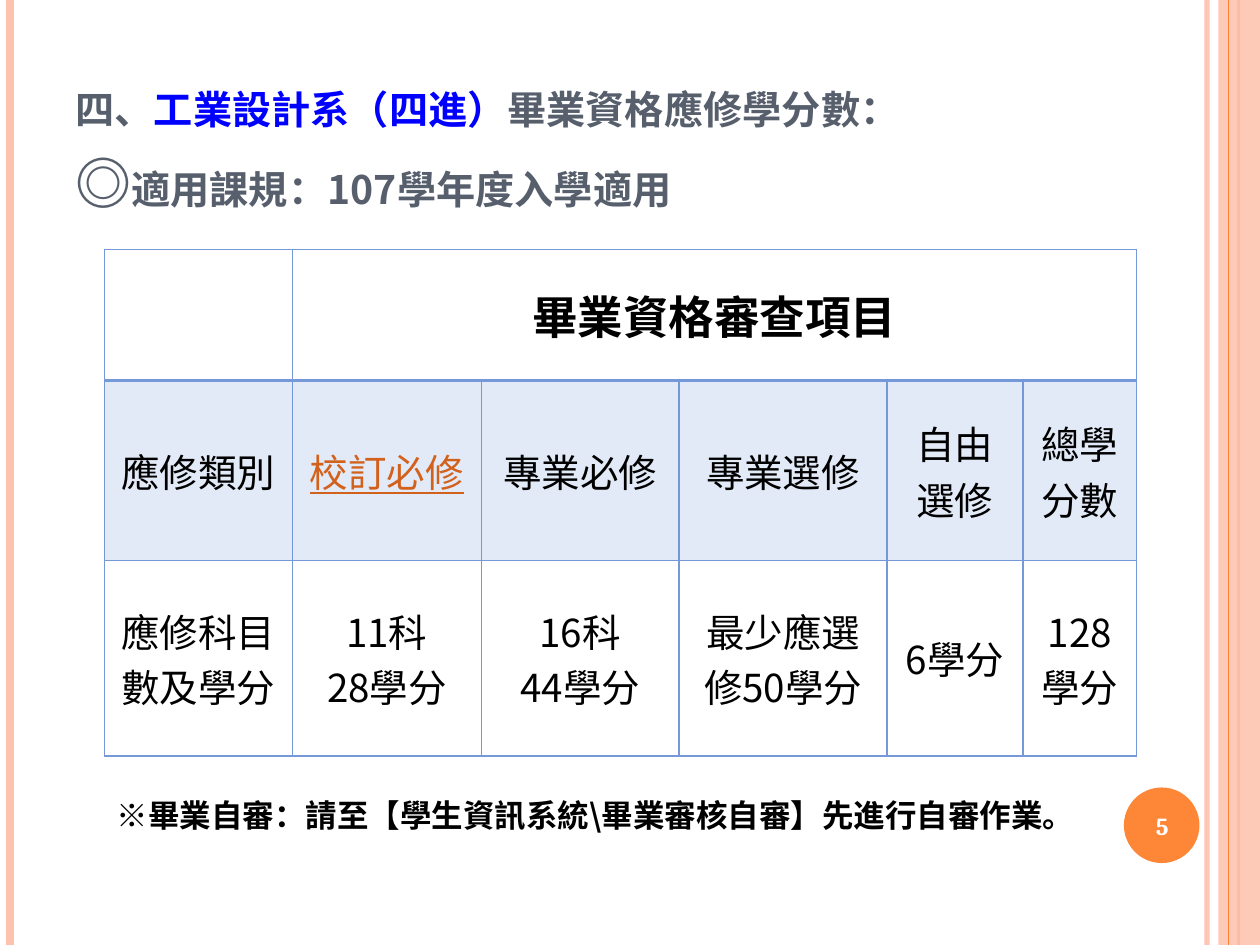
from lxml import etree
from pptx import Presentation
from pptx.dml.color import RGBColor
from pptx.enum.shapes import MSO_CONNECTOR, MSO_SHAPE
from pptx.enum.text import MSO_ANCHOR, PP_ALIGN
from pptx.oxml.ns import qn
from pptx.util import Inches, Pt

CENTER = PP_ALIGN.CENTER
MIDDLE, BOTTOM = MSO_ANCHOR.MIDDLE, MSO_ANCHOR.BOTTOM
STRAIGHT = MSO_CONNECTOR.STRAIGHT
RECT, OVAL = MSO_SHAPE.RECTANGLE, MSO_SHAPE.OVAL

CJK, SYMBOL, SERIF = "Noto Sans CJK SC", "Noto Sans CJK JP", "Cambria"
PEACH, ORANGE, BLUE, SLATE = "FEC3AE", "FE8637", "7598D9", "575F6D"
BLACK, WHITE, LINK, TITLE_BLUE = "000000", "FFFFFF", "D2611C", "0000FF"

# x, colour, width in points, opacity in percent
SIDE_LINES = [(9.58, PEACH, 3, 93), (0.08, PEACH, 4.5, 100), (9.83, ORANGE, 1.5, 100)]
EDGE_LINE = (9.75, ORANGE, 0.75, 100)

COLUMNS = [1.49, 1.5, 1.57, 1.65, 1.08, 0.9]
ROWS = [1.04, 1.43, 1.55]
HEADING = "畢業資格審查項目"
CATEGORIES = ["應修類別", "校訂必修", "專業必修", "專業選修", "自由\n選修", "總學\n分數"]
CREDITS = ["應修科目數及學分", "11科\n28學分", "16科\n44學分", "最少應選修50學分",
           "6學分", "128\n學分"]


def rgb(color):
    return RGBColor.from_string(color)


def set_fill(fill, color, opacity=100):
    fill.solid()
    fill.fore_color.rgb = rgb(color)
    if opacity < 100:
        clr = fill._xPr.find(qn("a:solidFill"))[0]
        etree.SubElement(clr, qn("a:alpha"), val=str(opacity * 1000))


def set_font(font, size, color, name=CJK, bold=False):
    """Set the font for both Latin and East Asian characters."""
    font.size, font.bold, font.name = Pt(size), bold, name
    font.color.rgb = rgb(color)
    latin = font._element.find(qn("a:latin"))
    ea = etree.Element(qn("a:ea"), typeface=name)
    latin.addnext(ea)


def add_line(s, x, color, width, opacity):
    """Add a vertical line over the full slide height."""
    line = s.shapes.add_connector(STRAIGHT, Inches(x), 0, Inches(x), Inches(7.5))
    line.line.width = Pt(width)
    set_fill(line.line.fill, color, opacity)
    etree.SubElement(line._element.spPr, qn("a:effectLst"))


def add_shape(s, kind, box, color, opacity=100):
    sp = s.shapes.add_shape(kind, *map(Inches, box))
    sp.shadow.inherit = False
    sp.line.fill.background()
    set_fill(sp.fill, color, opacity)


def add_text_frame(s, box, anchor=None):
    tf = s.shapes.add_textbox(*map(Inches, box)).text_frame
    tf.word_wrap = True
    tf.vertical_anchor = anchor
    return tf


def add_label(s, box, text, size, color, name=CJK, anchor=None, align=None):
    p = add_text_frame(s, box, anchor).paragraphs[0]
    p.alignment = align
    r = p.add_run()
    r.text = text
    set_font(r.font, size, color, name, True)


def add_title(s):
    p = add_text_frame(s, (0.5, 0.53, 8.17, 1.25), BOTTOM).paragraphs[0]
    lines = [
        [("四、", SLATE, 28, CJK), ("工業設計系（四進）", TITLE_BLUE, 28, CJK),
         ("畢業資格應修學分數：", SLATE, 28, CJK)],
        [("◎", SLATE, 40, SYMBOL), ("適用課規：107學年度入學適用", SLATE, 28, CJK)],
    ]
    for i, line in enumerate(lines):
        if i:
            p.add_line_break()
        for text, color, size, name in line:
            r = p.add_run()
            r.text = text
            set_font(r.font, size, color, name, True)
            r.font._element.set("cap", "small")


def set_borders(cell, top, bottom):
    tc_pr = cell._tc.get_or_add_tcPr()
    for side, width in (("L", 1), ("R", 1), ("T", top), ("B", bottom)):
        ln = etree.SubElement(tc_pr, qn(f"a:ln{side}"), w=str(Pt(width)))
        fill = etree.SubElement(ln, qn("a:solidFill"))
        etree.SubElement(fill, qn("a:srgbClr"), val=BLUE)


def fill_cell(cell, text, size=22, color=BLACK, bold=False):
    cell.vertical_anchor = MIDDLE
    cell.text_frame.text = text
    for p in cell.text_frame.paragraphs:
        p.alignment = CENTER
        for r in p.runs:
            set_font(r.font, size, color, CJK, bold)
            if color == LINK:
                r.font.underline = True


def add_credit_table(s):
    box = (0.83, 1.98, sum(COLUMNS), sum(ROWS))
    table = s.shapes.add_table(len(ROWS), len(COLUMNS), *map(Inches, box)).table
    for column, width in zip(table.columns, COLUMNS):
        column.width = Inches(width)
    for i, height in enumerate(ROWS):
        table.rows[i].height = Inches(height)
        for cell in table.rows[i].cells:
            set_borders(cell, 2 if i == 1 else 1, 2 if i == 0 else 1)
            if i == 1:
                set_fill(cell.fill, BLUE, 20)
            else:
                cell.fill.background()

    table.cell(0, 1).merge(table.cell(0, len(COLUMNS) - 1))
    fill_cell(table.cell(0, 1), HEADING, 26, bold=True)
    for j, (category, credit) in enumerate(zip(CATEGORIES, CREDITS)):
        fill_cell(table.cell(1, j), category, color=LINK if j == 1 else BLACK)
        fill_cell(table.cell(2, j), credit)
    for i in (1, 2):
        cell = table.cell(i, len(COLUMNS) - 1)
        cell.margin_left = cell.margin_right = cell.margin_top = cell.margin_bottom = 0


def main():
    prs = Presentation()
    prs.slide_width, prs.slide_height = Inches(10), Inches(7.5)
    s = prs.slides.add_slide(prs.slide_layouts[6])

    for line in SIDE_LINES:
        add_line(s, *line)
    add_shape(s, RECT, (9.67, 0, 0.33, 7.5), PEACH, 87)
    add_line(s, *EDGE_LINE)
    add_shape(s, OVAL, (8.92, 6.25, 0.6, 0.6), ORANGE)

    add_title(s)
    add_credit_table(s)
    add_label(s, (8.89, 6.27, 0.67, 0.57), "5", 14, WHITE, SERIF, MIDDLE, CENTER)
    add_label(s, (0.83, 6.27, 8.19, 0.4),
              "※畢業自審：請至【學生資訊系統\\畢業審核自審】先進行自審作業。", 18, BLACK)
    prs.save("out.pptx")


if __name__ == "__main__":
    main()
